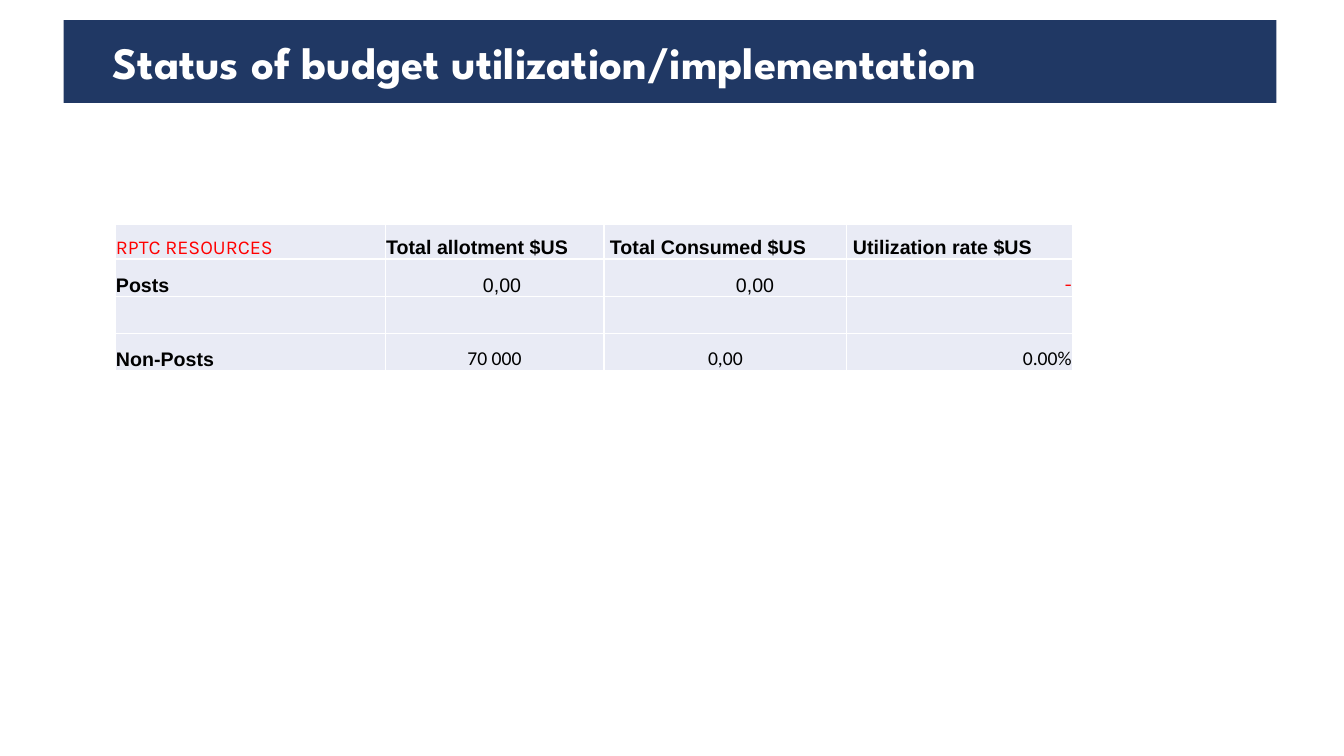
from lxml.etree import SubElement
from pptx import Presentation
from pptx.dml.color import RGBColor
from pptx.enum.text import MSO_ANCHOR as Anchor, MSO_AUTO_SIZE as AutoSize, PP_ALIGN as Align
from pptx.oxml.ns import qn
from pptx.util import Inches, Pt


def paint(fill, color):
    fill.solid()
    fill.fore_color.rgb = RGBColor.from_string(color)


def write(paragraph, text, size, font, color, bold, align, indent):
    paragraph.text = text
    paragraph.alignment = align
    if indent:
        paragraph._p.get_or_add_pPr().set("marL", str(Inches(indent)))
        paragraph._p.get_or_add_pPr().set("indent", "0")
    style = paragraph.runs[0].font if text else paragraph.font
    for key, value in dict(size=Pt(size), name=font, bold=bold).items():
        setattr(style, key, value)
    paint(style.fill, color)


prs = Presentation()
prs.slide_width, prs.slide_height = Inches(13.33), Inches(7.5)
slide = prs.slides.add_slide(prs.slide_layouts[5])

# Title banner with rounded corners
title = slide.shapes.title
banner_box = dict(left=0.63, top=0.2, width=12.03, height=0.82)
for side, length in banner_box.items():
    setattr(title, side, Inches(length))
outline = SubElement(title._element.spPr, qn("a:prstGeom"), prst="roundRect")
SubElement(outline, qn("a:avLst"))
paint(title.fill, "203864")
heading = title.text_frame
heading_format = dict(auto_size=AutoSize.NONE, word_wrap=True, vertical_anchor=Anchor.MIDDLE)
heading_format |= {f"margin_{side}": Inches(0.1) for side in ("left", "top", "right", "bottom")}
for key, value in heading_format.items():
    setattr(heading, key, value)
write(heading.paragraphs[0], "Status of budget utilization/implementation",
      32, "League Spartan", "FFFFFF", True, Align.LEFT, 0.39)

# Cell looks: font, colour, bold, alignment
label = ("Arial", "000000", True, Align.LEFT)
amount = ("Arial", "000000", False, Align.LEFT)
centred = ("Calibri", "000000", False, Align.CENTER)
rate = ("Calibri", "000000", False, Align.RIGHT)
red_label = ("Karla", "FF0000", False, Align.LEFT)
red_rate = ("Karla", "FF0000", False, Align.RIGHT)

# Budget rows: text, look, indent
budget = [
    [("RPTC RESOURCES", red_label, 0), ("Total allotment $US", label, 0),
     ("Total Consumed $US", label, 0.05), ("Utilization rate $US", label, 0.05)],
    [("Posts", label, 0), ("0,00", amount, 0.96), ("0,00", amount, 1.3), ("-", red_rate, 0)],
    [("", label, 0)] * 4,
    [("Non-Posts", label, 0), ("70 000", centred, 0), ("0,00", centred, 0), ("0.00%", rate, 0)],
]
column_widths = [2.68, 2.17, 2.41, 2.24]
row_heights = [0.34, 0.37, 0.37, 0.37]

# Budget table
resources = slide.shapes.add_table(
    len(row_heights), len(column_widths), Inches(1.14), Inches(2.23),
    Inches(sum(column_widths)), Inches(sum(row_heights))).table
resources.first_row = resources.horz_banding = False
for column, width in zip(resources.columns, column_widths):
    column.width = Inches(width)
for row, height in zip(resources.rows, row_heights):
    row.height = Inches(height)

cell_format = dict(margin_left=Inches(0.01), margin_right=Inches(0.01), margin_top=Inches(0.01),
                   margin_bottom=0, vertical_anchor=Anchor.BOTTOM)
for row, entries in zip(resources.rows, budget):
    for cell, (text, look, indent) in zip(row.cells, entries):
        for key, value in cell_format.items():
            setattr(cell, key, value)
        # White rules on all four sides come before the cell fill
        for edge in ("a:lnL", "a:lnR", "a:lnT", "a:lnB"):
            rule = SubElement(cell._tc.get_or_add_tcPr(), qn(edge), w=str(Pt(1)))
            SubElement(SubElement(rule, qn("a:solidFill")), qn("a:srgbClr"), val="FFFFFF")
        paint(cell.fill, "E9EBF5")
        write(cell.text_frame.paragraphs[0], text, 14, *look, indent)

prs.save("out.pptx")
